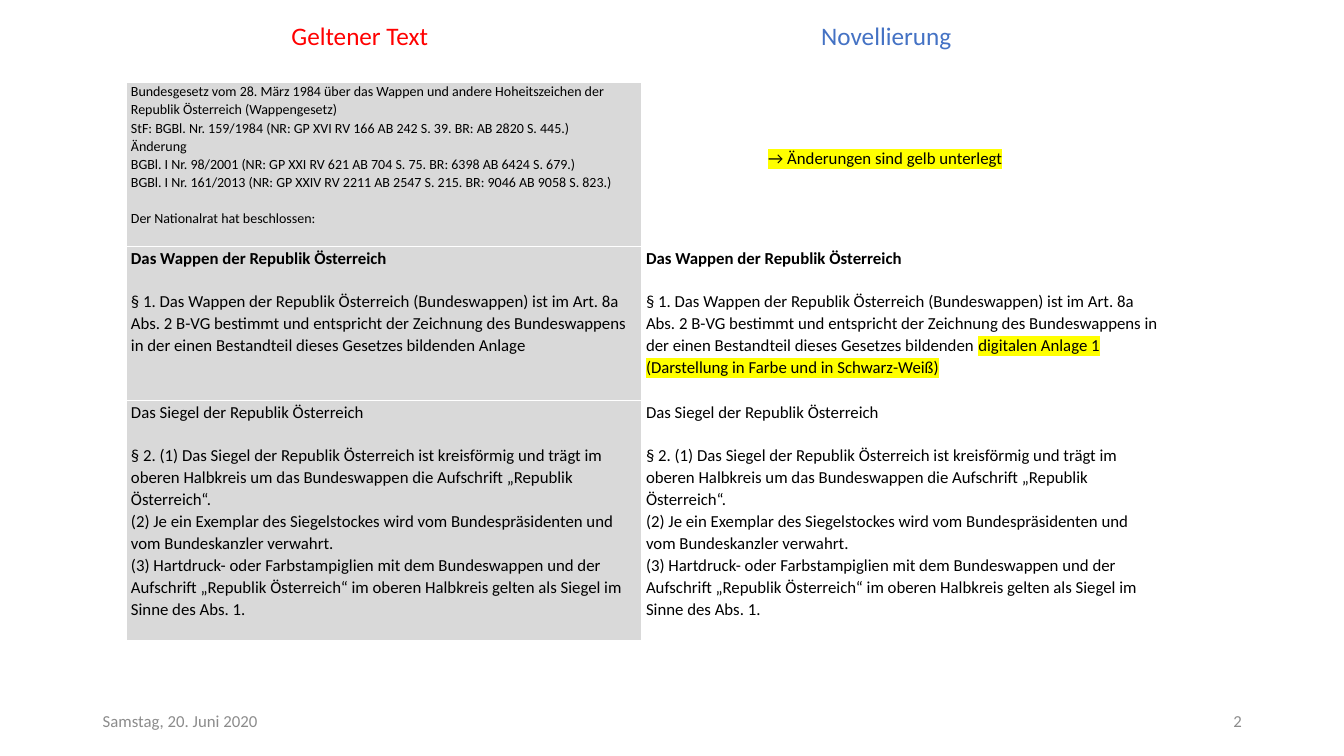
from lxml import etree
from pptx import Presentation
from pptx.dml.color import RGBColor
from pptx.enum import text as t
from pptx.oxml import ns
from pptx.util import Cm, Pt

HUES = {"old": "FF0000", "new": "4472C4", "ink": "000000", "foot": "8C8C8C",
        "grey": "D9D9D9", "white": "FFFFFF", "mark": "FFFF00"}

LAW = [
    "Bundesgesetz vom 28. März 1984 über das Wappen und andere Hoheitszeichen der "
    "Republik Österreich (Wappengesetz)",
    "StF: BGBl. Nr. 159/1984 (NR: GP XVI RV 166 AB 242 S. 39. BR: AB 2820 S. 445.)",
    "Änderung",
    "BGBl. I Nr. 98/2001 (NR: GP XXI RV 621 AB 704 S. 75. BR: 6398 AB 6424 S. 679.)",
    "BGBl. I Nr. 161/2013 (NR: GP XXIV RV 2211 AB 2547 S. 215. BR: 9046 AB 9058 S. 823.)",
    "Der Nationalrat hat beschlossen:",
]
NOTE = "→ Änderungen sind gelb unterlegt"
ARMS = [
    "Das Wappen der Republik Österreich",
    "§ 1. Das Wappen der Republik Österreich (Bundeswappen) ist im Art. 8a Abs. 2 B-VG "
    "bestimmt und entspricht der Zeichnung des Bundeswappens in der einen Bestandteil "
    "dieses Gesetzes bildenden ",
]
FORMER = "Anlage"
CHANGE = "digitalen Anlage 1 (Darstellung in Farbe und in Schwarz-Weiß)"
SEAL = [
    "Das Siegel der Republik Österreich",
    "§ 2. (1) Das Siegel der Republik Österreich ist kreisförmig und trägt im oberen "
    "Halbkreis um das Bundeswappen die Aufschrift „Republik Österreich“.",
    "(2) Je ein Exemplar des Siegelstockes wird vom Bundespräsidenten und vom "
    "Bundeskanzler verwahrt.",
    "(3) Hartdruck- oder Farbstampiglien mit dem Bundeswappen und der Aufschrift „Republik "
    "Österreich“ im oberen Halbkreis gelten als Siegel im Sinne des Abs. 1.",
]


def hue(name):
    return RGBColor.from_string(HUES[name])


def style(para, size, color="ink"):
    para.font.name = "Calibri"
    para.font.size = Pt(size)
    para.font.color.rgb = hue(color)


def mark(run):
    """Highlight a run in yellow."""
    run.font.color.rgb = hue("ink")
    light = etree.SubElement(run.font._element, ns.qn("a:highlight"))
    etree.SubElement(light, ns.qn("a:srgbClr"), val=HUES["mark"])


def write(cell, lines, size=12, gap=None):
    """Fill a cell; the line with index gap has one line of space above it."""
    frame = cell.text_frame
    for i, line in enumerate(lines):
        para = frame.add_paragraph() if i else frame.paragraphs[0]
        para.line_spacing = 1.07
        if i == gap:
            para.space_before = Pt(size * 1.3)
        style(para, size)
        para.add_run().text = line
    return frame.paragraphs


def heading(slide, left, top, width, height):
    title = slide.shapes.title
    title.left, title.top, title.width, title.height = left, top, width, height
    frame = title.text_frame
    frame.auto_size = t.MSO_AUTO_SIZE.NONE
    frame.vertical_anchor = t.MSO_ANCHOR.TOP
    para = frame.paragraphs[0]
    para.alignment = t.PP_ALIGN.LEFT
    # Tab stop where the second column heading begins
    stops = etree.SubElement(para._p.get_or_add_pPr(), ns.qn("a:tabLst"))
    etree.SubElement(stops, ns.qn("a:tab"), pos=str(Cm(13.35)), algn="l")
    style(para, 18, "old")
    for words, color in (("Geltener Text\t", "old"), ("Novellierung", "new")):
        run = para.add_run()
        run.text = words
        run.font.color.rgb = hue(color)


def compare(slide, left, top, cols, rows):
    """Table with the law in force on the left and the amendment on the right."""
    table = slide.shapes.add_table(len(rows), len(cols), left, top,
                                   sum(cols), sum(rows)).table
    table.horz_banding = False
    for col, width in zip(table.columns, cols):
        col.width = width
    for r, height in enumerate(rows):
        table.rows[r].height = height
        for c in range(len(cols)):
            cell = table.cell(r, c)
            cell.margin_left = cell.margin_right = Cm(0.12)
            cell.margin_top = cell.margin_bottom = 0
            cell.fill.solid()
            cell.fill.fore_color.rgb = hue("grey" if r and not c else "white")

    # Law and note on the marking
    write(table.cell(1, 0), LAW, 10, gap=5)
    note = table.cell(1, 1)
    note.margin_left, note.margin_top = Cm(3.2), Cm(1.63)
    mark(write(note, [NOTE])[0].runs[0])

    # Both versions of § 1 and § 2
    for c, ending in enumerate((FORMER, CHANGE)):
        paras = write(table.cell(2, c), ARMS, gap=1)
        paras[0].runs[0].font.bold = True
        run = paras[1].add_run()
        run.text = ending
        if c:
            mark(run)
        write(table.cell(3, c), SEAL, gap=1)


def footer(slide, left, top, width, height, words, align):
    frame = slide.shapes.add_textbox(left, top, width, height).text_frame
    frame.word_wrap = True
    frame.vertical_anchor = t.MSO_ANCHOR.MIDDLE
    para = frame.paragraphs[0]
    para.alignment = align
    style(para, 12, "foot")
    para.add_run().text = words


def main():
    deck = Presentation()
    deck.slide_width, deck.slide_height = Cm(33.87), Cm(19.05)
    slide = deck.slides.add_slide(deck.slide_layouts[5])
    heading(slide, Cm(7.09), Cm(0.38), Cm(21.44), Cm(1.02))
    compare(slide, Cm(3.18), Cm(1.3), [Cm(12.98), Cm(13.2)],
            [Cm(0.77), Cm(4.14), Cm(3.88), Cm(6.05)])
    for left, words, align in ((2.34, "Samstag, 20. Juni 2020", t.PP_ALIGN.LEFT),
                               (23.93, "2", t.PP_ALIGN.RIGHT)):
        footer(slide, Cm(left), Cm(17.65), Cm(7.62), Cm(1.02), words, align)
    deck.save("out.pptx")


if __name__ == "__main__":
    main()
